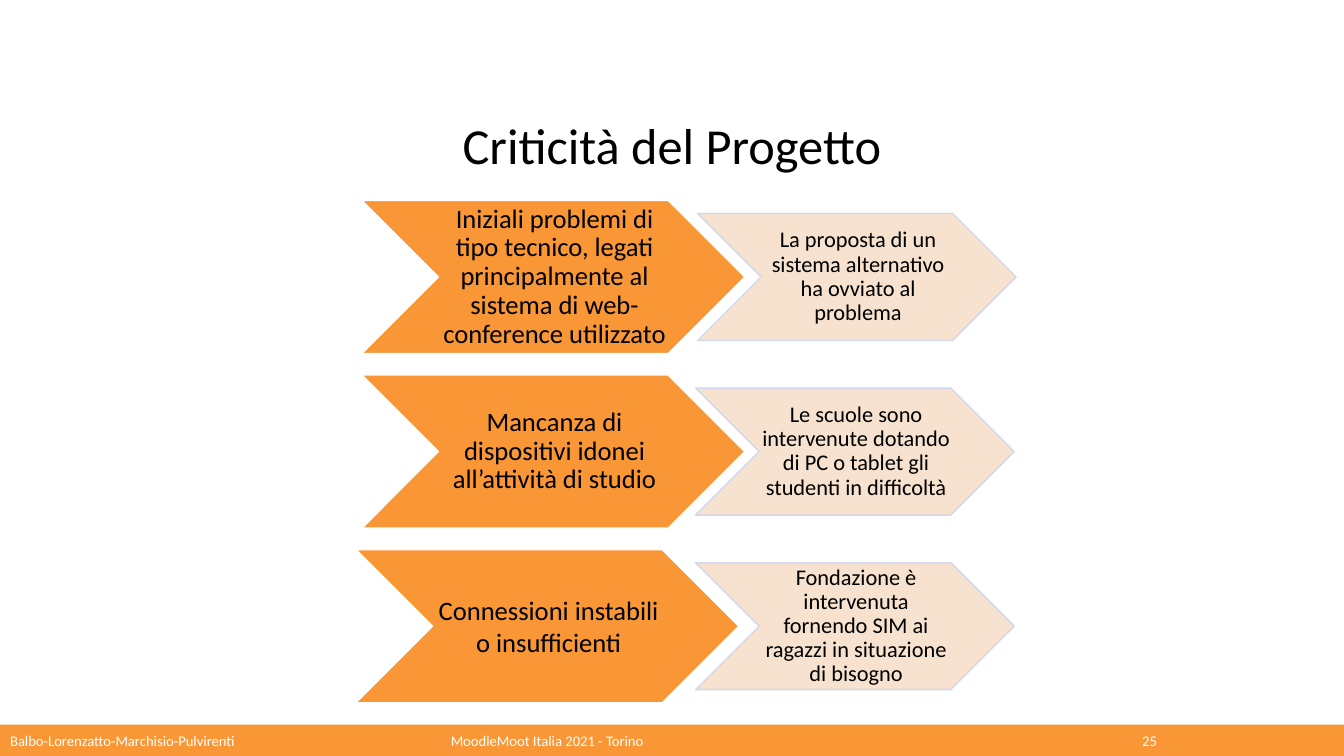
"""Build the slide on the project's problems and how each was answered."""
from lxml.etree import SubElement
from pptx import Presentation
from pptx.dml.color import RGBColor
from pptx.enum.shapes import MSO_SHAPE as Shape
from pptx.enum.text import MSO_ANCHOR as Anchor, MSO_AUTO_SIZE as AutoSize, PP_ALIGN as Align
from pptx.oxml.ns import qn
from pptx.util import Cm, Pt

ORANGE = RGBColor(0xF9, 0x97, 0x37)
PEACH = RGBColor(0xF7, 0xDF, 0xCA)
LAVENDER = RGBColor(0xCF, 0xD5, 0xEA)
WHITE = RGBColor(0xFF, 0xFF, 0xFF)
BLACK = RGBColor(0x00, 0x00, 0x00)

SLIDE_WIDTH, SLIDE_HEIGHT = 33.87, 19.05
BAR_HEIGHT = 0.79
FIRST_ROW_CENTER, ROW_PITCH = 6.98, 4.4
PROBLEM_SIZE = (9.65, 3.86)
ANSWER_SIZE = (8.03, 3.2)

ROWS = [
    (9.12, "Iniziali problemi di tipo tecnico, legati principalmente al sistema di web-conference utilizzato", 0.9,
     17.58, "La proposta di un sistema alternativo ha ovviato al problema"),
    (9.12, "Mancanza di dispositivi idonei all’attività di studio", 0.9,
     17.53, "Le scuole sono intervenute dotando di PC o tablet gli studenti in difficoltà"),
    (8.97, "Connessioni instabili o insufficienti", 1.0,
     17.53, "Fondazione è intervenuta fornendo SIM ai ragazzi in situazione di bisogno"),
]


class SlideBuilder:
    """Draw the elements of one slide in a shared style."""

    font_name = "Calibri"

    def __init__(self, presentation):
        self.slide = presentation.slides.add_slide(presentation.slide_layouts[1])

    def place(self, shape, left, top, width, height):
        shape.left, shape.top = Cm(left), Cm(top)
        shape.width, shape.height = Cm(width), Cm(height)

    def style(self, paragraph, size, color, align, spacing=0.9):
        paragraph.alignment = align
        paragraph.line_spacing = spacing
        paragraph.space_before = Pt(0)
        paragraph.font.name = self.font_name
        paragraph.font.size = Pt(size)
        paragraph.font.color.rgb = color

    def title(self, text):
        title = self.slide.shapes.title
        self.place(title, 2.33, 1.89, 29.21, 3.68)
        frame = title.text_frame
        frame.text = text
        frame.auto_size = AutoSize.NONE
        frame.vertical_anchor = Anchor.MIDDLE
        self.style(frame.paragraphs[0], 36, BLACK, Align.CENTER)

    def authors(self, text):
        body = self.slide.placeholders[1]
        self.place(body, 0, 18.36, 10.36, 0.74)
        frame = body.text_frame
        frame.text = text
        frame.auto_size = AutoSize.NONE
        paragraph = frame.paragraphs[0]
        properties = paragraph._p.get_or_add_pPr()
        properties.set("marL", "0")
        properties.set("indent", "0")
        SubElement(properties, qn("a:buNone"))
        self.style(paragraph, 10.5, WHITE, Align.LEFT)

    def filled_shape(self, kind, left, top, width, height, color):
        shape = self.slide.shapes.add_shape(kind, Cm(left), Cm(top), Cm(width), Cm(height))
        shape.shadow.inherit = False
        shape.fill.solid()
        shape.fill.fore_color.rgb = color
        frame = shape.text_frame
        frame.word_wrap = True
        frame.vertical_anchor = Anchor.MIDDLE
        frame.margin_left = frame.margin_right = frame.margin_top = frame.margin_bottom = 0
        return shape

    def footer_bar(self, texts, centers):
        bar = self.filled_shape(Shape.RECTANGLE, 0, SLIDE_HEIGHT - BAR_HEIGHT, SLIDE_WIDTH, BAR_HEIGHT, ORANGE)
        bar.line.fill.background()
        self.slide.shapes.title.element.addprevious(bar.element)
        bar.text_frame.text = "".join("\t" + text for text in texts)
        paragraph = bar.text_frame.paragraphs[0]
        tabs = SubElement(paragraph._p.get_or_add_pPr(), qn("a:tabLst"))
        for center in centers:
            SubElement(tabs, qn("a:tab"), pos=str(Cm(center)), algn="ctr")
        self.style(paragraph, 10.5, WHITE, Align.LEFT, 1.0)

    def chevron(self, left, center, size, text, font_size, fill, line, spacing=0.9, opacity=100):
        width, height = size
        shape = self.filled_shape(Shape.CHEVRON, left, center - height / 2, width, height, fill)
        shape.line.color.rgb = line
        shape.line.width = Pt(1)
        if opacity < 100:
            for color in shape.element.spPr.iter(qn("a:srgbClr")):
                SubElement(color, qn("a:alpha"), val=str(opacity * 1000))
        frame = shape.text_frame
        frame.margin_left = Cm(0.06)
        frame.text = text
        self.style(frame.paragraphs[0], font_size, BLACK, Align.CENTER, spacing)


def main():
    presentation = Presentation()
    presentation.slide_width = Cm(SLIDE_WIDTH)
    presentation.slide_height = Cm(SLIDE_HEIGHT)
    builder = SlideBuilder(presentation)
    builder.footer_bar(["MoodleMoot Italia 2021 - Torino", "25"], [13.79, 28.97])
    builder.title("Criticità del Progetto")
    builder.authors("Balbo-Lorenzatto-Marchisio-Pulvirenti")
    for row, (problem_left, problem, spacing, answer_left, answer) in enumerate(ROWS):
        center = FIRST_ROW_CENTER + row * ROW_PITCH
        builder.chevron(problem_left, center, PROBLEM_SIZE, problem, 19, ORANGE, WHITE, spacing)
        builder.chevron(answer_left, center, ANSWER_SIZE, answer, 16, PEACH, LAVENDER, opacity=90)
    presentation.save("out.pptx")


if __name__ == "__main__":
    main()
